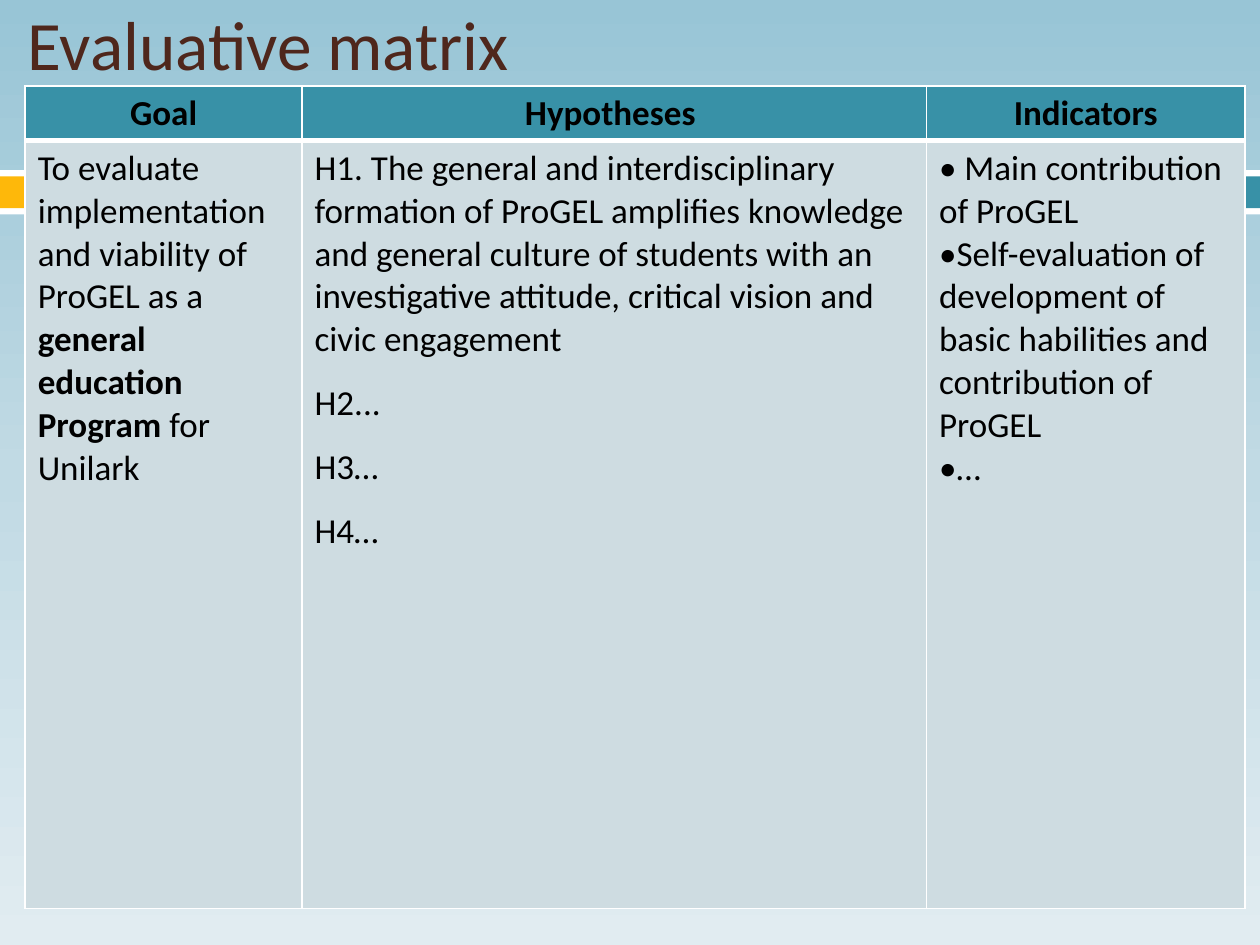
from lxml import etree
from pptx import Presentation
from pptx import util as u
from pptx.dml.color import RGBColor
from pptx.enum import shapes, text
from pptx.oxml.ns import qn

WIDE, HIGH = u.Inches(10), u.Inches(7.5)
FONT = "Calibri"
HUES = {"white": "FFFFFF", "gold": "FEB80A", "teal": "3891A7", "pale": "CEDCE1",
        "brown": "4F271C", "black": "000000"}
SKY = {0: "98C5D6", 50: "C1DAE4", 100: "E1ECF1"}

HEADS = ["Goal", "Hypotheses ", "Indicators"]
GOAL = [("To evaluate implementation and viability of ProGEL as a ", False),
        ("general education Program ", True),
        ("for Unilark", False)]
HYPOS = ["H1. The general and interdisciplinary formation of ProGEL amplifies "
         "knowledge and general culture of students with an investigative "
         "attitude, critical vision and civic engagement",
         "H2...", "H3…", "H4…"]
SIGNS = [" Main contribution of ProGEL",
         "Self-evaluation of development of basic habilities and contribution of ProGEL",
         "…"]


def rgb(hue):
    return RGBColor.from_string(HUES[hue])


def style(run, size, hue, bold=False):
    font = run.font
    font.name, font.size, font.bold = FONT, u.Pt(size), bold
    font.color.rgb = rgb(hue)


def paint_sky(slide):
    """Fill the background with a three-stop gradient from top to bottom."""
    fill = slide.background.fill
    fill.gradient()
    fill.gradient_angle = 270
    stops = slide.background._cSld.find(".//" + qn("a:gsLst"))
    for old in list(stops):
        stops.remove(old)
    for pos, code in SKY.items():
        stop = etree.SubElement(stops, qn("a:gs"), pos=str(pos * 1000))
        etree.SubElement(stop, qn("a:srgbClr"), val=code)


def add_band(slide, left, top, width, height):
    """White strip with a gold block and a teal bar inside it."""
    inset = height / 7
    parts = [(0, 0, 1, height, "white"),
             (0, inset, 0.058, height - 2 * inset, "gold"),
             (0.065, inset, 0.935, height - 2 * inset, "teal")]
    for x, y, share, tall, hue in parts:
        bar = slide.shapes.add_shape(
            shapes.MSO_SHAPE.RECTANGLE, int(left + x * width), int(top + y),
            int(share * width), int(tall))
        bar.shadow.inherit = False
        bar.fill.solid()
        bar.fill.fore_color.rgb = rgb(hue)
        bar.line.fill.background()


def add_title(slide, left, top, width, height):
    frame = slide.shapes.add_textbox(left, top, width, height).text_frame
    frame.word_wrap = True
    frame.vertical_anchor = text.MSO_ANCHOR.MIDDLE
    frame.text = "Evaluative matrix"
    style(frame.paragraphs[0].runs[0], 39.6, "brown")


def dress(cell, hue, top, bottom):
    """Give a cell its fill and white borders, in points."""
    cell.fill.solid()
    cell.fill.fore_color.rgb = rgb(hue)
    props = cell._tc.get_or_add_tcPr()
    sides = {"L": 1, "R": 1, "T": top, "B": bottom}
    for spot, (side, size) in enumerate(sides.items()):
        line = etree.Element(qn("a:ln" + side), w=str(u.Pt(size)))
        solid = etree.SubElement(line, qn("a:solidFill"))
        etree.SubElement(solid, qn("a:srgbClr"), val=HUES["white"])
        props.insert(spot, line)


def write(cell, lines, bold=False):
    frame = cell.text_frame
    frame.text = "\n".join(lines)
    for para in frame.paragraphs:
        for run in para.runs:
            style(run, 20, "black", bold)
    return frame.paragraphs


def add_matrix(slide, left, top, width, height):
    grid = slide.shapes.add_table(2, 3, left, top, width, height).table
    for col, share in zip(grid.columns, (0.227, 0.512, 0.261)):
        col.width = int(width * share)
    for row, share in zip(grid.rows, (0.066, 0.934)):
        row.height = int(height * share)

    for num, head in enumerate(HEADS):
        cell = grid.cell(0, num)
        write(cell, [head], True)[0].alignment = text.PP_ALIGN.CENTER
        dress(cell, "teal", 1, 3)
        dress(grid.cell(1, num), "pale", 3, 1)

    goal = grid.cell(1, 0).text_frame.paragraphs[0]
    for words, bold in GOAL:
        run = goal.add_run()
        run.text = words
        style(run, 20, "black", bold)
    for para in write(grid.cell(1, 1), HYPOS):
        para.space_before = u.Pt(12)
    for para in write(grid.cell(1, 2), SIGNS):
        props = para._p.get_or_add_pPr()
        props.set("marL", "0")
        props.set("indent", "0")
        etree.SubElement(props, qn("a:buFont"), typeface=FONT)
        etree.SubElement(props, qn("a:buChar"), char="•")


def main():
    deck = Presentation()
    deck.slide_width, deck.slide_height = WIDE, HIGH
    slide = deck.slides.add_slide(deck.slide_layouts[6])
    paint_sky(slide)
    regions = [(add_band, 0, 0.18, 1, 0.047),
               (add_title, 0.012, 0, 0.892, 0.09),
               (add_matrix, 0.02, 0.091, 0.968, 0.87)]
    for build, x, y, w, h in regions:
        build(slide, int(x * WIDE), int(y * HIGH), int(w * WIDE), int(h * HIGH))
    deck.save("out.pptx")


if __name__ == "__main__":
    main()
